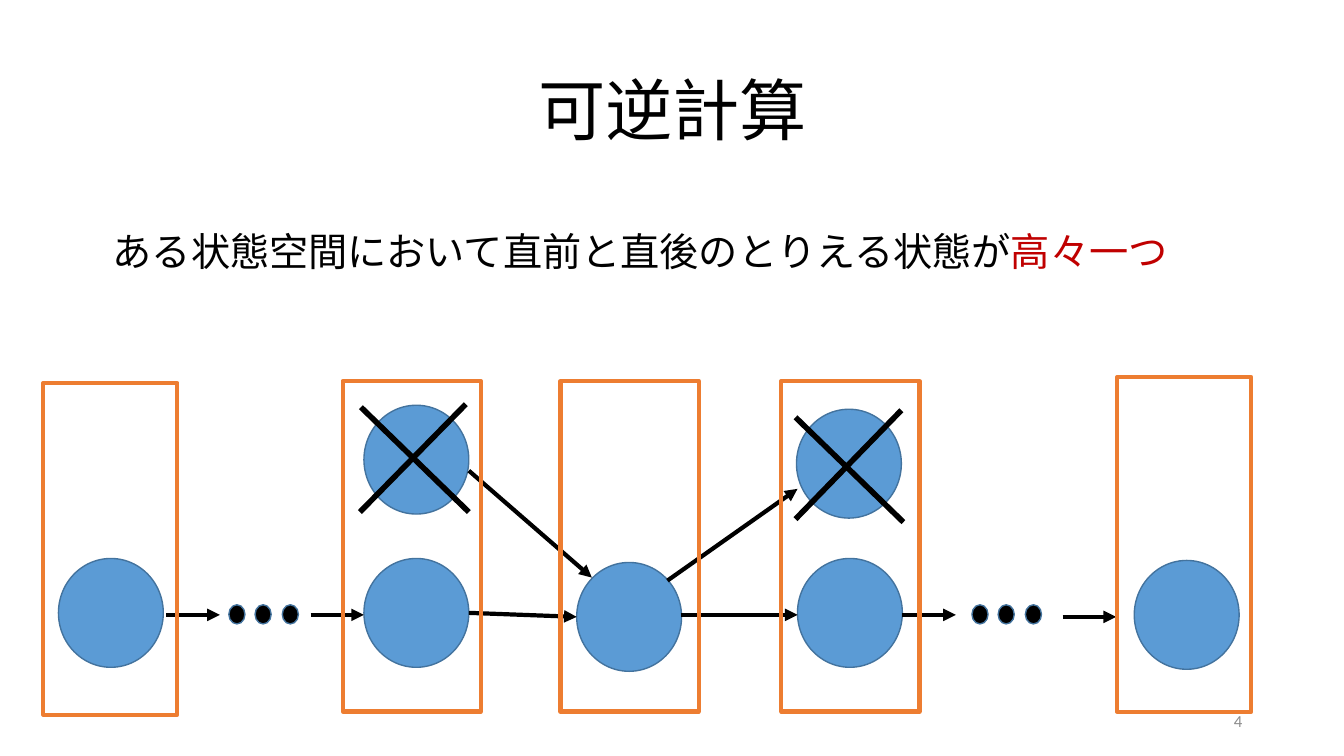
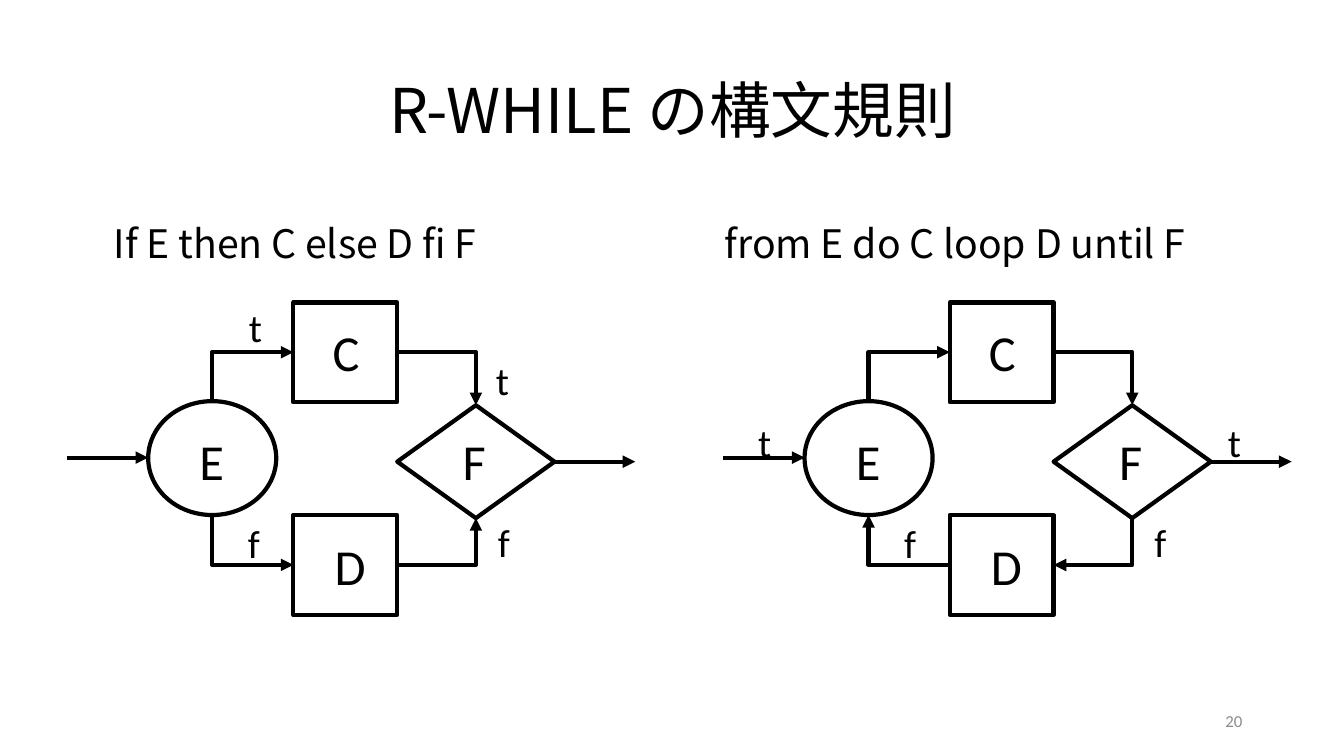
"""Build two slides on reversible computing: state chains and R-WHILE syntax."""
from dataclasses import dataclass
from typing import NamedTuple

from lxml.etree import SubElement as Sub
from pptx import Presentation
from pptx.dml.color import RGBColor as Rgb
from pptx.enum.shapes import MSO_CONNECTOR as Conn, MSO_SHAPE as Kind
from pptx.enum.text import MSO_ANCHOR as Anchor, PP_ALIGN as Align
from pptx.oxml.ns import qn
from pptx.shapes.autoshape import Shape
from pptx.shapes.connector import Connector
from pptx.slide import Slide
from pptx.util import Inches, Pt


@dataclass(frozen=True)
class Theme:
    ink: Rgb = Rgb(0, 0, 0)
    red: Rgb = Rgb(0xC0, 0, 0)
    gray: Rgb = Rgb(0x8C, 0x8C, 0x8C)
    blue: Rgb = Rgb(0x5B, 0x9B, 0xD5)
    rim: Rgb = Rgb(0x43, 0x73, 0x9E)
    orange: Rgb = Rgb(0xED, 0x7D, 0x31)
    face: str = "Calibri"
    sans: str = "Noto Sans CJK KR"
    kana: str = "Arial"
    head: int = 48
    code: int = 44
    node: int = 36
    body: int = 28
    foot: int = 12
    thin: int = 1
    line: int = 3
    cross: int = 4


T = Theme()


class Box(NamedTuple):
    x: float
    y: float
    w: float
    h: float


class Span(NamedTuple):
    text: str
    face: str = T.face
    color: Rgb = T.ink


class Mark(NamedTuple):
    text: str
    x: float
    y: float


class Flow(NamedTuple):
    dx: float
    rule: Mark
    marks: tuple[Mark, ...]
    loop: bool


class Bend(NamedTuple):
    box: Shape
    side: int
    node: Shape
    port: int
    end: str


HEAD = Box(0.92, 0.4, 11.5, 1.45)
FOOT = Box(9.42, 6.95, 3, 0.4)
BALL_W, BALL_H = 1.04, 1.08
BALLS = ((0.58, 5.54), (3.61, 5.54), (5.72, 5.58), (7.91, 5.54),
         (11.25, 5.56), (3.61, 4.02), (7.9, 4.06))
STEPS = ((1.65, 6.1, 2.18, 6.1), (3.08, 6.1, 3.61, 6.1),
         (4.65, 6.08, 5.72, 6.12), (6.75, 6.1, 7.91, 6.1),
         (8.95, 6.1, 9.48, 6.1), (10.54, 6.12, 11.07, 6.12),
         (4.65, 4.67, 5.87, 5.73), (6.62, 5.76, 7.91, 4.85))
CROSSES = ((3.58, 4.04, 4.65, 5.08), (3.57, 5.08, 4.62, 4.01),
           (7.89, 4.14, 8.96, 5.18), (7.89, 5.15, 8.94, 4.07))
FRAMES = (Box(0.43, 3.8, 1.33, 3.29), Box(11.08, 3.74, 1.33, 3.32),
          *(Box(x, 3.78, 1.37, 3.28) for x in (3.4, 5.56, 7.75)))
NODES = (Mark("E", 1.88, 4.22), Mark("F", 4.49, 4.22),
         Mark("C", 3.2, 3.14), Mark("D", 3.22, 5.26))
FALSE = (Mark("f", 4.84, 5.09), Mark("f", 2.36, 5.1))
FLOWS = (
    Flow(0, Mark("If E then C else D fi F", 1.03, 2.13),
         (Mark("t", 4.82, 3.49), Mark("t", 2.37, 2.96), *FALSE), False),
    Flow(6.51, Mark("from E do C loop D until F", 7.09, 2.13),
         (Mark("t", 5.57, 4.1), Mark("t", 0.91, 4.1), *FALSE), True),
)


def write(slide: Slide, box: Box, spans: tuple[Span, ...], size: int,
          align: Align = Align.LEFT, anchor: Anchor = Anchor.TOP,
          space: float = 1.0) -> None:
    """Write one paragraph of spans in a text box."""
    frame = slide.shapes.add_textbox(*map(Inches, box)).text_frame
    frame.word_wrap = True
    frame.vertical_anchor = anchor
    para = frame.paragraphs[0]
    para.alignment = align
    para.line_spacing = space
    para.font.size = Pt(size)
    for span in spans:
        run = para.add_run()
        run.text = span.text
        run.font.name = span.face
        run.font.color.rgb = span.color


def shape(slide: Slide, kind: Kind, box: Box, line: Rgb, width: int,
          fill: Rgb | None = None) -> Shape:
    """Draw a flat preset shape."""
    item = slide.shapes.add_shape(kind, *map(Inches, box))
    item.shadow.inherit = False
    if fill is None:
        item.fill.background()
    else:
        item.fill.solid()
        item.fill.fore_color.rgb = fill
    item.line.color.rgb = line
    item.line.width = Pt(width)
    return item


def style(line: Connector, width: int, end: str = "") -> None:
    """Style a line, with an arrowhead at the named end."""
    line.line.color.rgb = T.ink
    line.line.width = Pt(width)
    if end:
        Sub(line.line._get_or_add_ln(), qn(f"a:{end}"), type="triangle")
    Sub(line._element.spPr, qn("a:effectLst"))


def stroke(slide: Slide, ends: tuple[float, ...], width: int = T.line,
           end: str = "tailEnd") -> None:
    """Draw a straight line or arrow."""
    line = slide.shapes.add_connector(Conn.STRAIGHT, *map(Inches, ends))
    style(line, width, end)


def bend(slide: Slide, link: Bend) -> None:
    """Join the side of a box to the top or bottom of a node."""
    box, node = link.box, link.node
    x = box.left + (box.width if link.side == 3 else 0)
    y = node.top + (node.height if link.port else 0)
    line = slide.shapes.add_connector(
        Conn.ELBOW, x, box.top + box.height // 2,
        node.left + node.width // 2, y)
    root = line._element
    root.spPr.find(qn("a:prstGeom")).set("prst", "bentConnector2")
    glue = root.nvCxnSpPr.cNvCxnSpPr
    Sub(glue, qn("a:stCxn"), id=str(box.shape_id), idx=str(link.side))
    Sub(glue, qn("a:endCxn"), id=str(node.shape_id), idx=str(link.port))
    style(line, T.line, link.end)


def frame(deck: Presentation, spans: tuple[Span, ...], size: int,
          page: int) -> Slide:
    """Add a blank slide with title and page number."""
    slide = deck.slides.add_slide(deck.slide_layouts[6])
    write(slide, HEAD, spans, size, Align.CENTER, Anchor.MIDDLE, 0.9)
    write(slide, FOOT, (Span(str(page), color=T.gray),), T.foot,
          Align.RIGHT, Anchor.MIDDLE)
    return slide


def chain(deck: Presentation) -> None:
    """Build the slide of state chains."""
    slide = frame(deck, (Span("可逆計算"),), T.head, 4)
    write(slide, Box(1.02, 2.21, 12, 0.6),
          (Span("ある状態空間において直前と直後のとりえる状態が"),
           Span("高々一つ", color=T.red)), T.body)
    for x, y in BALLS:
        shape(slide, Kind.FLOWCHART_CONNECTOR, Box(x, y, BALL_W, BALL_H),
              T.rim, T.thin, T.blue)
    for left in (2.27, 9.64):
        for gap in (0, 0.26, 0.53):
            shape(slide, Kind.FLOWCHART_CONNECTOR,
                  Box(left + gap, 6, 0.16, 0.19), T.rim, T.thin, T.ink)
    for step in STEPS:
        stroke(slide, step)
    for cross in CROSSES:
        stroke(slide, cross, T.cross, "")
    for box in FRAMES:
        shape(slide, Kind.RECTANGLE, box, T.orange, T.line)


def chart(slide: Slide, flow: Flow) -> None:
    """Draw one flow chart with its rule and labels."""
    dx = flow.dx

    def part(kind: Kind, x: float, y: float, w: float, h: float) -> Shape:
        return shape(slide, kind, Box(x + dx, y, w, h), T.ink, T.line)

    top, low = (part(Kind.RECTANGLE, 2.91, y, 1.03, 0.99)
                for y in (3, 5.11))
    entry = part(Kind.OVAL, 1.47, 3.98, 1.27, 1.13)
    test = part(Kind.DIAMOND, 3.94, 4.02, 1.56, 1.12)
    stroke(slide, (0.66 + dx, 4.54, 1.47 + dx, 4.54))
    stroke(slide, (5.49 + dx, 4.58, 6.3 + dx, 4.58))
    left, right = "headEnd", "tailEnd"
    if flow.loop:
        left, right = right, left
    for link in (Bend(top, 1, entry, 0, "headEnd"),
                 Bend(top, 3, test, 0, "tailEnd"),
                 Bend(low, 1, entry, 4, left),
                 Bend(low, 3, test, 2, right)):
        bend(slide, link)
    for marks, size, w, h in ((NODES, T.node, 0.51, 0.71),
                              (flow.marks, T.body, 0.33, 0.57)):
        for mark in marks:
            write(slide, Box(mark.x + dx, mark.y, w, h),
                  (Span(mark.text),), size)
    rule = flow.rule
    write(slide, Box(rule.x, rule.y, 5.8, 0.57),
          (Span(rule.text, T.sans),), T.body)


def syntax(deck: Presentation) -> None:
    """Build the slide of syntax rules."""
    slide = frame(deck, (Span("R-WHILE ", T.sans), Span("の", T.kana),
                         Span("構文規則")), T.code, 20)
    for flow in FLOWS:
        chart(slide, flow)


def main() -> None:
    """Build and save the deck."""
    deck = Presentation()
    deck.slide_width, deck.slide_height = Inches(13.33), Inches(7.5)
    chain(deck)
    syntax(deck)
    deck.save("out.pptx")


if __name__ == "__main__":
    main()
